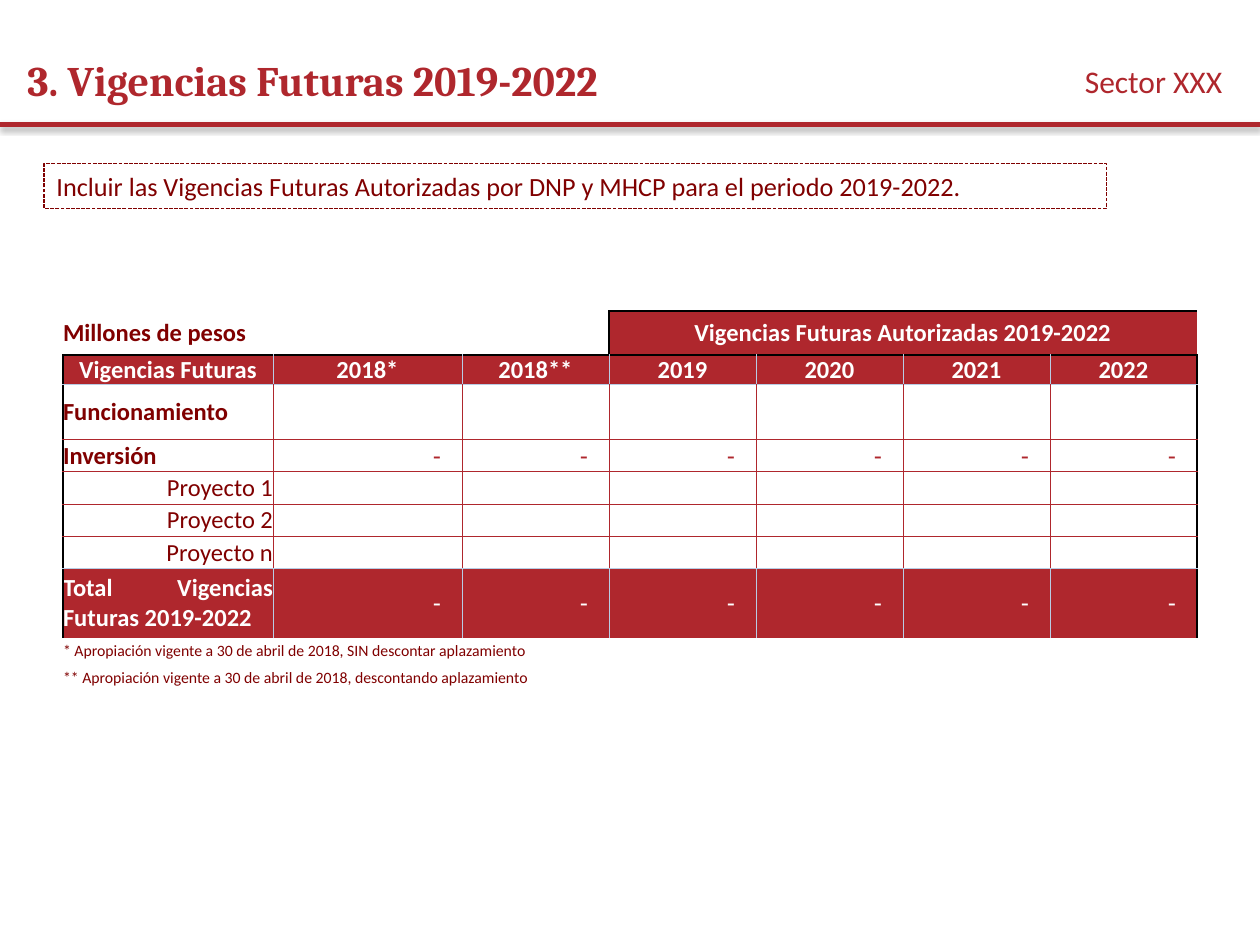
"""Build the slide on future budget commitments 2019-2022."""
from lxml.etree import SubElement
from pptx import Presentation
from pptx.dml.color import RGBColor
from pptx.enum.dml import MSO_LINE_DASH_STYLE as Dash
from pptx.enum.shapes import MSO_CONNECTOR as Connector, MSO_SHAPE as Shape
from pptx.enum.text import MSO_ANCHOR as Anchor, MSO_AUTO_SIZE as AutoSize, PP_ALIGN as Align
from pptx.oxml.ns import qn
from pptx.util import Pt

COLORS = {"red": "AF272D", "maroon": "800000", "white": "FFFFFF", "black": "000000", "pale": "B8CCE4"}


def write(frame, text, size, color, align=Align.LEFT, bold=False, font="Calibri"):
    para = frame.paragraphs[0]
    para.text = text
    para.alignment = align
    para.font.size = Pt(size)
    para.font.name = font
    para.font.bold = bold
    para.font.color.rgb = RGBColor.from_string(COLORS[color])


def add_border(cell, side, color):
    props = cell._tc.get_or_add_tcPr()
    if color is None:
        SubElement(SubElement(props, qn(f"a:ln{side}"), w="0"), qn("a:noFill"))
        return
    width = Pt(1 if color == "black" else 0.5)
    line = SubElement(props, qn(f"a:ln{side}"), w=str(int(width)))
    SubElement(SubElement(line, qn("a:solidFill")), qn("a:srgbClr"), val=COLORS[color])


deck = Presentation()
deck.slide_width, deck.slide_height = Pt(720), Pt(540)
page = deck.slides.add_slide(deck.slide_layouts[6])

rule = page.shapes.add_connector(Connector.STRAIGHT, 0, Pt(71.3), Pt(720), Pt(71.3))
rule.line.color.rgb = RGBColor.from_string(COLORS["red"])
rule.line.width = Pt(3)
effects = SubElement(rule._element.spPr, qn("a:effectLst"))
shadow = SubElement(effects, qn("a:outerShdw"), blurRad=str(int(Pt(3.1))),
                    dist=str(int(Pt(1.8))), dir="5400000", rotWithShape="0")
shade = SubElement(shadow, qn("a:srgbClr"), val=COLORS["black"])
SubElement(shade, qn("a:alpha"), val="35000")

note = page.shapes.add_shape(Shape.RECTANGLE, Pt(25.2), Pt(93.6), Pt(607), Pt(25.4))
note.shadow.inherit = False
note.fill.background()
note.line.color.rgb = RGBColor.from_string(COLORS["maroon"])
note.line.width = Pt(0.75)
note.line.dash_style = Dash.SQUARE_DOT
note.text_frame.word_wrap = True
note.text_frame.auto_size = AutoSize.SHAPE_TO_FIT_TEXT
note.text_frame.vertical_anchor = Anchor.TOP
write(note.text_frame, "Incluir las Vigencias Futuras Autorizadas por DNP y MHCP para el periodo 2019-2022.",
      15, "maroon")

sector = page.shapes.add_textbox(Pt(496), Pt(31.7), Pt(209.5), Pt(29))
sector.text_frame.word_wrap = True
sector.text_frame.auto_size = AutoSize.SHAPE_TO_FIT_TEXT
write(sector.text_frame, "Sector XXX", 18, "red", Align.RIGHT)

title = page.shapes.add_textbox(Pt(8.6), Pt(26), Pt(597.6), Pt(39.6))
title.text_frame.word_wrap = True
title.text_frame.vertical_anchor = Anchor.MIDDLE
write(title.text_frame, "3. Vigencias Futuras 2019-2022", 24, "red", bold=True, font="Cambria")

dashes, blanks = ["-"] * 6, [""] * 6
rows = [
    ["Millones de pesos", "", "", "Vigencias Futuras Autorizadas 2019-2022", "", "", ""],
    ["Vigencias Futuras", "2018*", "2018**", "2019", "2020", "2021", "2022"],
    ["Funcionamiento"] + blanks,
    ["Inversión"] + dashes,
    ["Proyecto 1"] + blanks,
    ["Proyecto 2"] + blanks,
    ["Proyecto n"] + blanks,
    ["Total Vigencias Futuras 2019-2022"] + dashes,
    ["* Apropiación vigente a 30 de abril de 2018, SIN descontar aplazamiento"] + blanks,
    ["** Apropiación vigente a 30 de abril de 2018, descontando aplazamiento"] + blanks,
]
widths = [120, 108] + [84] * 5
heights = [25.2, 16.6, 31.3] + [18.5] * 4 + [39.4, 15.5, 15]
HEAD, LABELS, FIRST, LAST, TOTAL = 0, 1, 2, 6, 7
row_aligns = {HEAD: Align.CENTER, LABELS: Align.CENTER, 4: Align.RIGHT, 5: Align.RIGHT,
              LAST: Align.RIGHT, TOTAL: Align.JUSTIFY}
levels = ([None, "black", "pale"] + ["red"] * 4 + ["pale"] + [None] * 3)

frame = page.shapes.add_table(len(rows), len(widths), Pt(36), Pt(177.8), Pt(sum(widths)), Pt(sum(heights)))
table = frame.table
table.first_row = table.horz_banding = False
table._tbl.tblPr.find(qn("a:tableStyleId")).text = "{2D5ABB26-0587-4C30-8999-92F81FD0307C}"
for column, width in zip(table.columns, widths):
    column.width = Pt(width)
for row, height in zip(table.rows, heights):
    row.height = Pt(height)
table.cell(HEAD, 3).merge(table.cell(HEAD, 6))
for r in (8, 9):
    table.cell(r, 0).merge(table.cell(r, 2))

for r, texts in enumerate(rows):
    for c, text in enumerate(texts):
        cell = table.cell(r, c)
        banner = r == HEAD and c >= 3
        filled = banner or r in (LABELS, TOTAL)
        size = 9 if r > TOTAL else 14
        cell.margin_left = cell.margin_top = cell.margin_bottom = 0
        cell.margin_right = Pt(12 if text == "-" else 0)
        cell.vertical_anchor = Anchor.MIDDLE

        inner = "pale" if filled else "red"
        left = "black" if c == 0 else inner
        right = "black" if c == 6 else inner
        if r == HEAD:
            left = "black" if c == 3 else None
            right = "black" if c in (2, 6) else None
        elif r > TOTAL:
            left = right = None
        top = "black" if banner else levels[r]
        for side, color in zip("LRTB", (left, right, top, levels[r + 1])):
            add_border(cell, side, color)

        if filled:
            cell.fill.solid()
            cell.fill.fore_color.rgb = RGBColor.from_string(COLORS["red"])
        else:
            cell.fill.background()

        if text == "-":
            write(cell.text_frame, text, size, "white" if filled else "red", Align.RIGHT, font="Arial")
        elif text:
            align = Align.LEFT if (r, c) == (HEAD, 0) else row_aligns.get(r, Align.LEFT)
            bold = r in (HEAD, LABELS, FIRST, 3, TOTAL)
            write(cell.text_frame, text, size, "white" if filled else "maroon", align, bold)
        else:
            SubElement(cell.text_frame.paragraphs[0]._p, qn("a:endParaRPr"), sz=str(size * 100))

deck.save("out.pptx")
